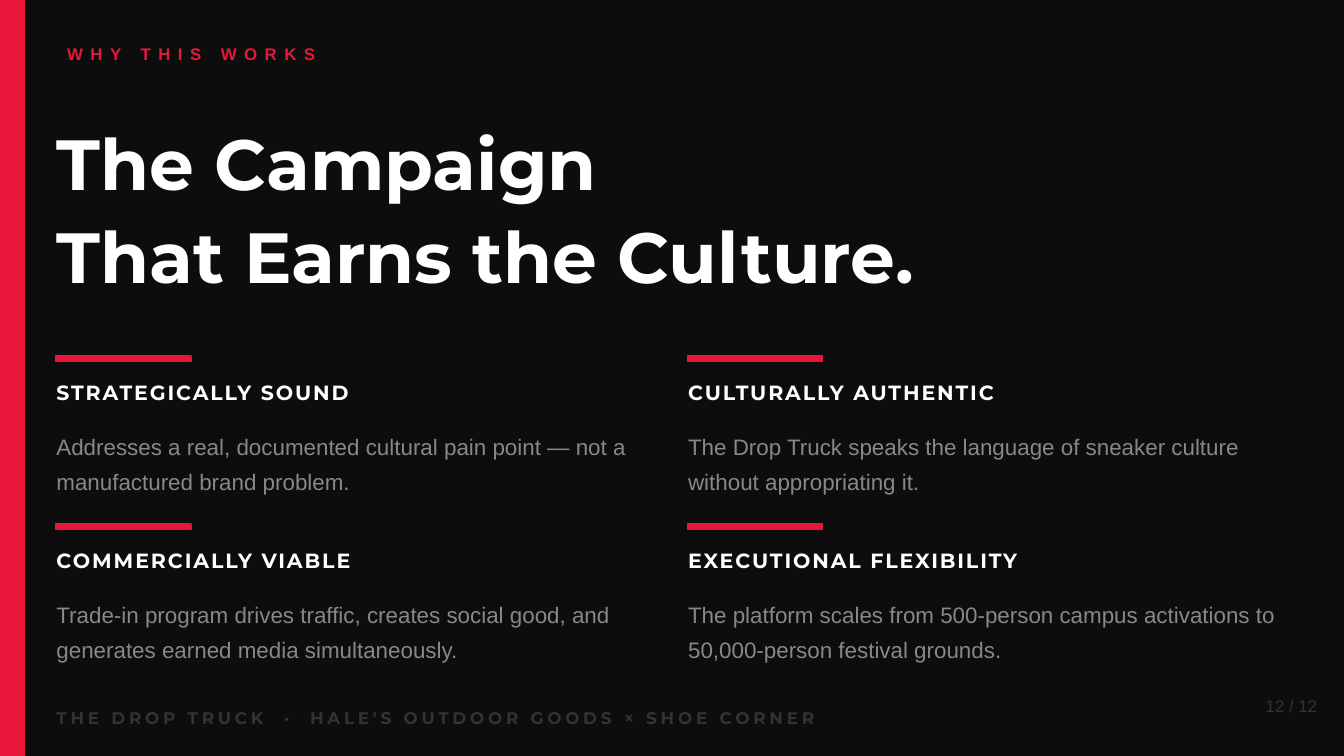
from pptx import Presentation
from pptx.dml.color import RGBColor
from pptx.enum import shapes, text
from pptx.util import Inches, Pt

COLORS = {"bg": "0D0D0D", "red": "E8173A", "white": "FFFFFF", "gray": "888888", "dim": "333333"}
LABEL = dict(size=9, name="Arial", color="red", bold=True, spc=4)
TITLE = dict(size=38, name="Montserrat", color="white", bold=True, spacing=1.1)
HEADING = dict(size=11, name="Montserrat", color="white", bold=True, spc=1)
BODY = dict(size=12, name="Arial", color="gray", bold=False, spacing=1.3)
FOOTER = dict(size=9, name="Montserrat", color="dim", bold=True, spc=2)
PAGE = dict(size=9, name="Arial", color="dim", bold=False, align=text.PP_ALIGN.RIGHT)
WIDTH = 10
HEIGHT = WIDTH * 9 / 16

prs = Presentation()
prs.slide_width, prs.slide_height = Inches(WIDTH), Inches(HEIGHT)
s = prs.slides.add_slide(prs.slide_layouts[5])
s.background.fill.solid()
s.background.fill.fore_color.rgb = RGBColor.from_string(COLORS["bg"])


def add_bar(x, y, w, h):
    sp = s.shapes.add_shape(shapes.MSO_SHAPE.RECTANGLE, *map(Inches, (x, y, w, h)))
    sp.shadow.inherit = False
    sp.fill.solid()
    sp.fill.fore_color.rgb = sp.line.color.rgb = RGBColor.from_string(COLORS["red"])
    sp.line.width = Pt(1)


def put_text(content, x, y, w, h, fmt, sp=None):
    sp = sp or s.shapes.add_textbox(0, 0, 0, 0)
    sp.left, sp.top, sp.width, sp.height = map(Inches, (x, y, w, h))
    tf = sp.text_frame
    frame = dict(margin_left=0, margin_top=0, margin_right=0, margin_bottom=0, word_wrap=True,
                 auto_size=text.MSO_AUTO_SIZE.NONE, vertical_anchor=text.MSO_ANCHOR.MIDDLE)
    for key, value in frame.items():
        setattr(tf, key, value)
    tf.text = content
    for p in tf.paragraphs:
        p.alignment = fmt.get("align", text.PP_ALIGN.LEFT)
        p.line_spacing = fmt.get("spacing", 1.0)
        for r in p.runs:
            for key in ("name", "bold"):
                setattr(r.font, key, fmt[key])
            r.font.size = Pt(fmt["size"])
            r.font.color.rgb = RGBColor.from_string(COLORS[fmt["color"]])
            if "spc" in fmt:
                r._r.get_or_add_rPr().set("spc", str(fmt["spc"] * 100))


add_bar(0, 0, 0.18, HEIGHT)
put_text("WHY THIS WORKS", 0.5, 0.25, 9, 0.3, LABEL)
put_text("The Campaign\nThat Earns the Culture.", 0.42, 0.62, 9.2, 1.8, TITLE, s.shapes.title)

reasons = [
    ("STRATEGICALLY SOUND",
     "Addresses a real, documented cultural pain point — not a manufactured brand problem."),
    ("CULTURALLY AUTHENTIC",
     "The Drop Truck speaks the language of sneaker culture without appropriating it."),
    ("COMMERCIALLY VIABLE",
     "Trade-in program drives traffic, creates social good, and generates earned media simultaneously."),
    ("EXECUTIONAL FLEXIBILITY",
     "The platform scales from 500-person campus activations to 50,000-person festival grounds."),
]
for i, (heading, body) in enumerate(reasons):
    row, col = divmod(i, 2)
    x, y = 0.42 + 4.7 * col, 2.65 + 1.25 * row
    add_bar(x, y, 1, 0.04)
    put_text(heading, x, y + 0.12, 4.5, 0.3, HEADING)
    put_text(body, x, y + 0.45, 4.4, 0.65, BODY)

put_text("THE DROP TRUCK  ·  HALE'S OUTDOOR GOODS × SHOE CORNER", 0.42, 5.2, 9, 0.28, FOOTER)
put_text("12 / 12", 8.8, 5.1, 1, 0.3, PAGE)

prs.save("out.pptx")
